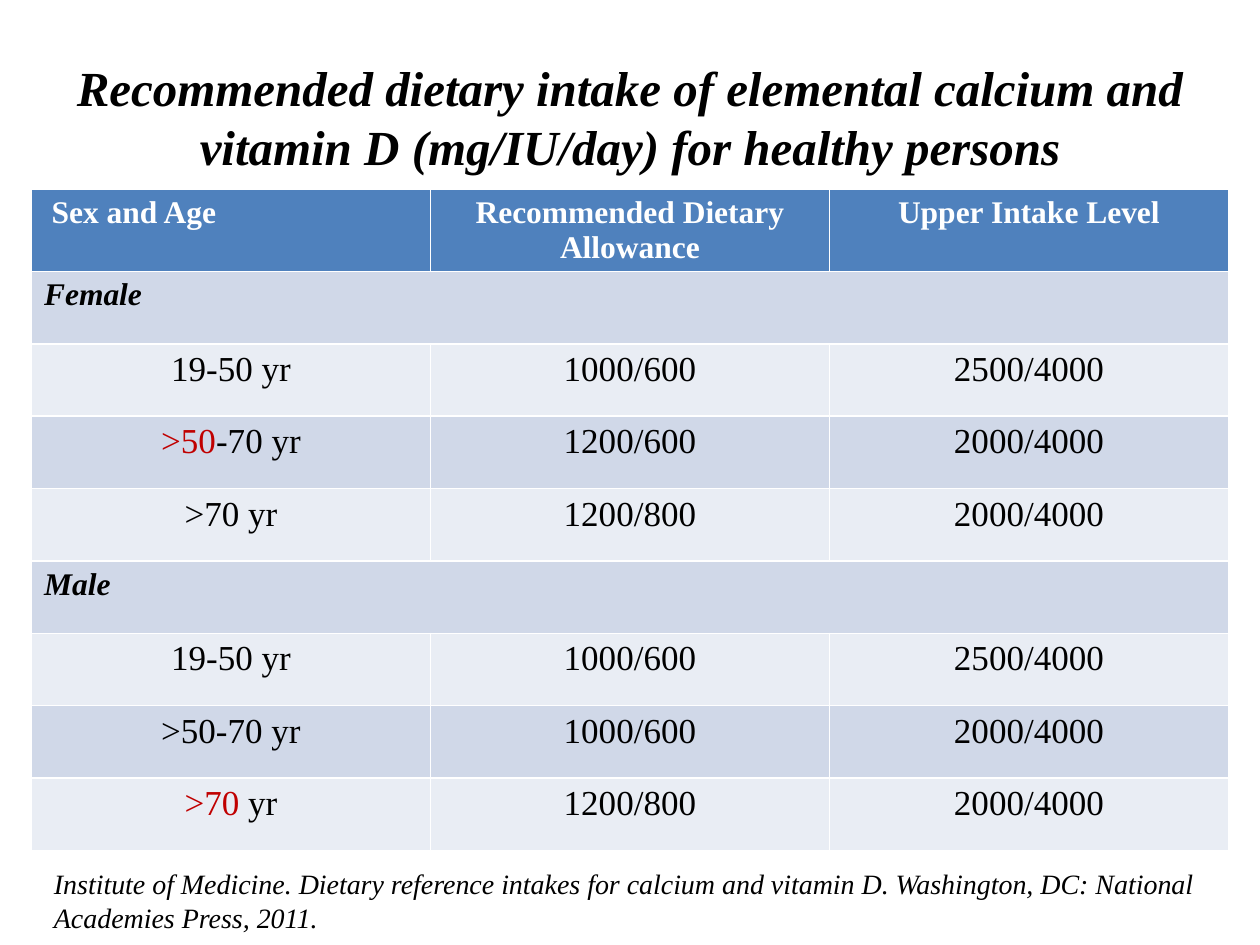
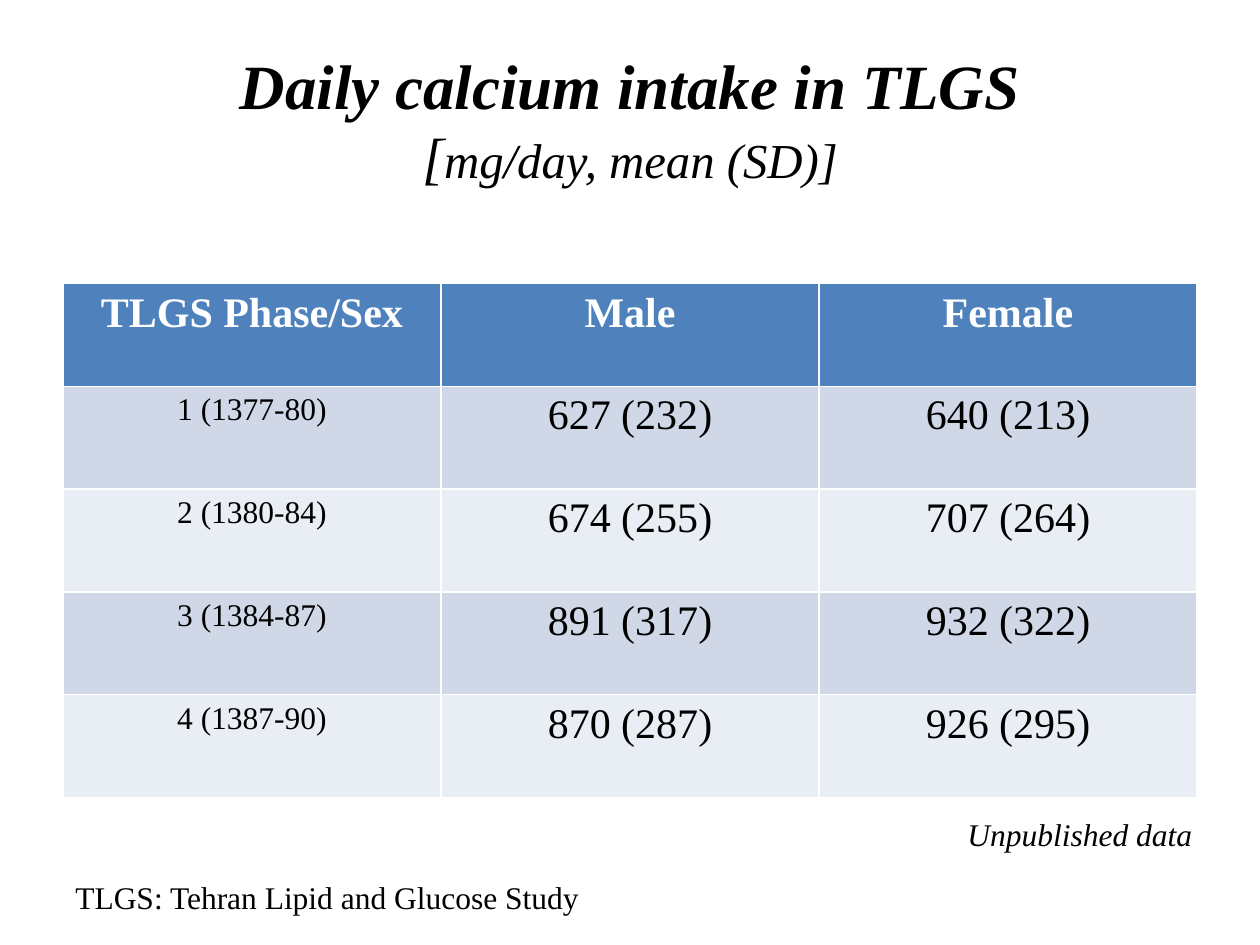
"""Build two slides of tables on calcium and vitamin D intake."""
from pptx import Presentation
from pptx.dml.color import RGBColor
from pptx.enum.text import MSO_ANCHOR, MSO_AUTO_SIZE, PP_ALIGN
from pptx.util import Inches, Pt

LEFT, CENTER = PP_ALIGN.LEFT, PP_ALIGN.CENTER
MIDDLE = MSO_ANCHOR.MIDDLE
NO_AUTOFIT = MSO_AUTO_SIZE.NONE
FONT_NAME = "Times New Roman"
COLORS = {
    "text": "000000",
    "header_text": "FFFFFF",
    "highlight": "C00000",
    "header": "4F81BD",
    "band_dark": "D0D8E8",
    "band_light": "E9EDF4",
}

SLIDES = [
    {
        "title": [("Recommended dietary intake of elemental calcium and "
                   "vitamin D (mg/IU/day) for healthy persons", 28, True)],
        "title_height": 1.25,
        "table_box": (0.25, 1.5, 9.5, 5.17),
        "sizes": {"header": 18, "label": 20, "value": 20},
        "header_align": LEFT,
        "header_margin": 0.16,
        "rows": [
            ["Sex and Age", "Recommended Dietary Allowance", "Upper Intake Level"],
            ["Female"],
            ["19-50 yr", "1000/600", "2500/4000"],
            [">50-70 yr", "1200/600", "2000/4000"],
            [">70 yr", "1200/800", "2000/4000"],
            ["Male"],
            ["19-50 yr", "1000/600", "2500/4000"],
            [">50-70 yr", "1000/600", "2000/4000"],
            [">70 yr", "1200/800", "2000/4000"],
        ],
        "highlights": {3: ">50", 8: ">70 "},
        "notes": [
            ("Institute of Medicine. Dietary reference intakes for calcium and "
             "vitamin D. Washington, DC: National Academies Press, 2011.",
             (0.33, 6.83, 9.42, 0.64), 16, True),
        ],
    },
    {
        "title": [("Daily calcium intake in TLGS", 36, True), None,
                  ("[", 32.4, False), ("mg/day, mean (SD)]", 27.9, False)],
        "title_height": 1.28,
        "table_box": (0.5, 2.25, 9, 4.08),
        "sizes": {"header": 24, "label": 18, "value": 24},
        "header_align": CENTER,
        "header_margin": 0.1,
        "rows": [
            ["TLGS Phase/Sex", "Male", "Female"],
            ["1 (1377-80)", "627 (232)", "640 (213)"],
            ["2 (1380-84)", "674 (255)", "707 (264)"],
            ["3 (1384-87)", "891 (317)", "932 (322)"],
            ["4 (1387-90)", "870 (287)", "926 (295)"],
        ],
        "highlights": {},
        "notes": [
            ("Unpublished data", (7.58, 6.42, 2.67, 0.4), 18, True),
            ("TLGS: Tehran Lipid and Glucose Study", (0.5, 6.92, 4.67, 0.4), 18, False),
        ],
    },
]


def style_font(font, size, color="text", bold=False, italic=False):
    font.name = FONT_NAME
    font.size = Pt(size)
    font.bold = bold
    font.italic = italic
    font.color.rgb = RGBColor.from_string(COLORS[color])


presentation = Presentation()
presentation.slide_width = Inches(10)
presentation.slide_height = Inches(7.5)
title_only = presentation.slide_layouts[5]

for content in SLIDES:
    slide = presentation.slides.add_slide(title_only)
    title = slide.shapes.title
    title.left, title.top = Inches(0.5), Inches(0.3)
    title.width, title.height = Inches(9), Inches(content["title_height"])
    title.text_frame.auto_size = NO_AUTOFIT
    title.text_frame.vertical_anchor = MIDDLE
    paragraph = title.text_frame.paragraphs[0]
    paragraph.alignment = CENTER
    for part in content["title"]:
        if part is None:
            paragraph.add_line_break()
            continue
        text, size, bold = part
        run = paragraph.add_run()
        run.text = text
        style_font(run.font, size, bold=bold, italic=True)

    rows = content["rows"]
    sizes = content["sizes"]
    box = [Inches(length) for length in content["table_box"]]
    table = slide.shapes.add_table(len(rows), len(rows[0]), *box).table
    for row_index, row in enumerate(rows):
        is_header = row_index == 0
        is_group = len(row) == 1
        if is_group:
            table.cell(row_index, 0).merge(table.cell(row_index, len(rows[0]) - 1))
        band = "header" if is_header else ("band_light", "band_dark")[row_index % 2]
        for column_index, text in enumerate(row):
            cell = table.cell(row_index, column_index)
            cell.fill.solid()
            cell.fill.fore_color.rgb = RGBColor.from_string(COLORS[band])
            paragraph = cell.text_frame.paragraphs[0]
            paragraph.alignment = LEFT if is_group else CENTER
            if is_header and column_index == 0:
                paragraph.alignment = content["header_align"]
                cell.margin_left = Inches(content["header_margin"])
            role = "label" if column_index == 0 else "value"
            size = sizes["header" if is_header or is_group else role]
            color = "header_text" if is_header else "text"
            style_font(paragraph.font, size, color, is_header or is_group, is_group)
            highlight = content["highlights"].get(row_index, "") if column_index == 0 else ""
            if highlight:
                run = paragraph.add_run()
                run.text = highlight
                run.font.color.rgb = RGBColor.from_string(COLORS["highlight"])
            paragraph.add_run().text = text[len(highlight):]

    for text, note_box, size, italic in content["notes"]:
        note = slide.shapes.add_textbox(*[Inches(length) for length in note_box])
        note.text_frame.word_wrap = True
        paragraph = note.text_frame.paragraphs[0]
        paragraph.text = text
        style_font(paragraph.font, size, italic=italic)

presentation.save("out.pptx")
